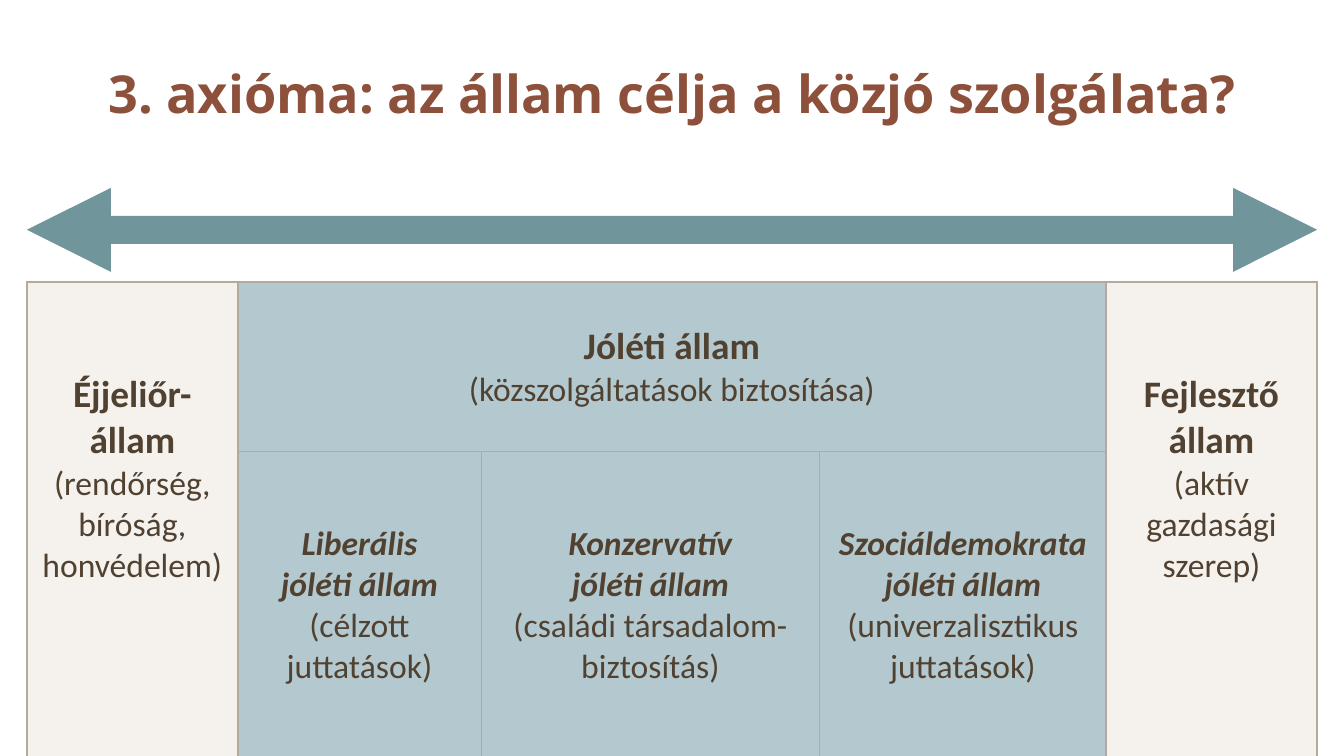
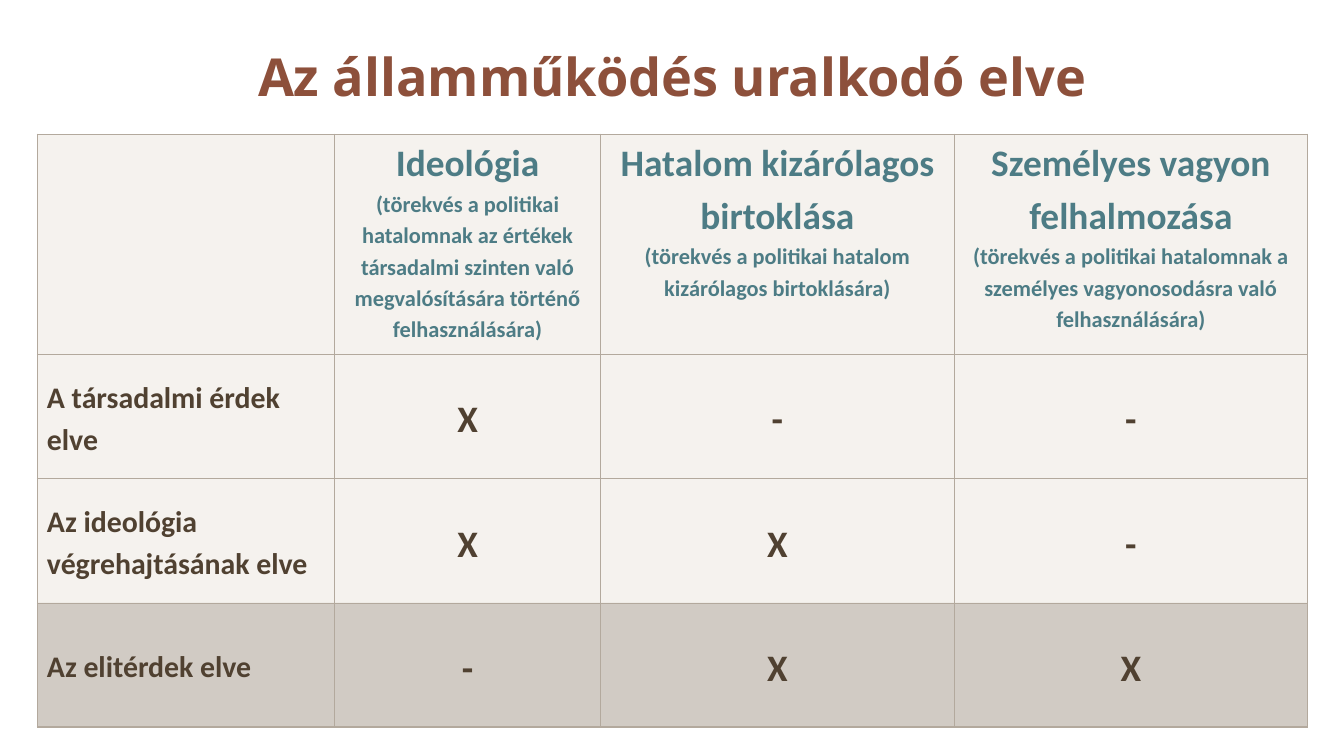
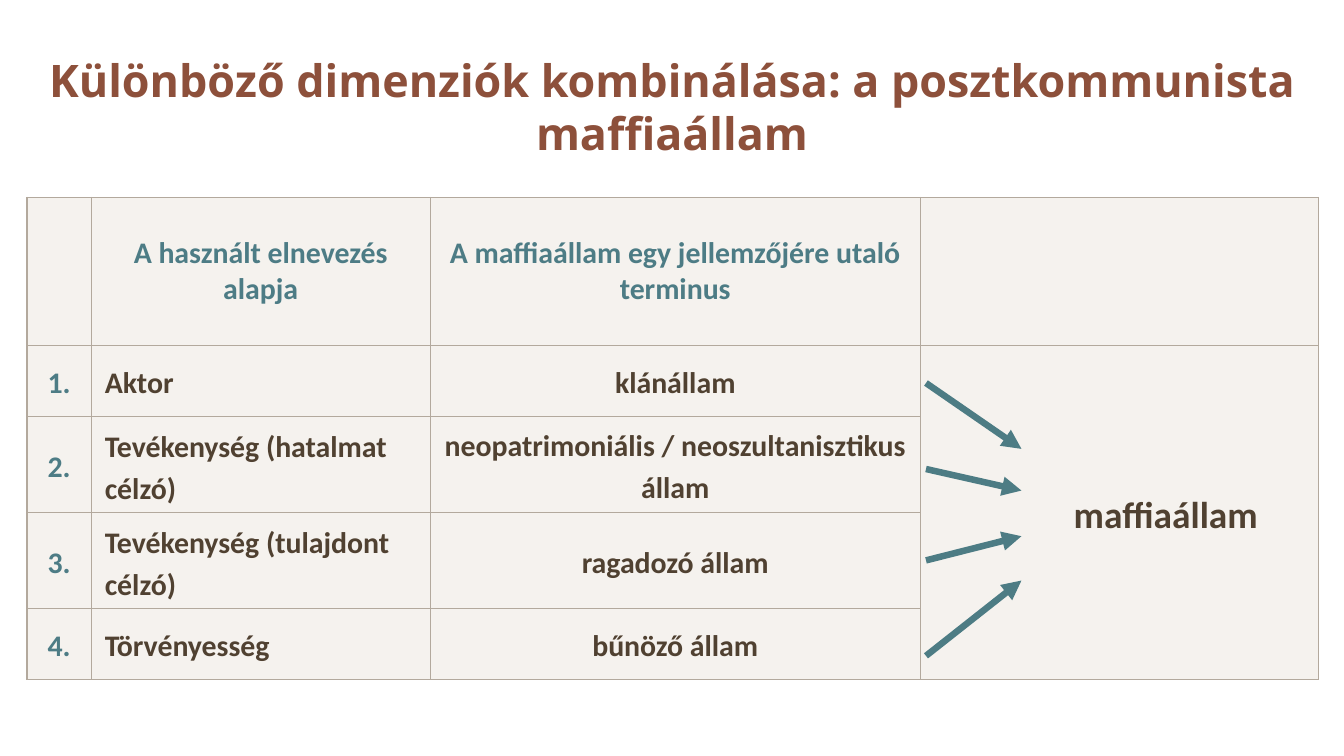
import lxml.etree
import pptx
import pptx.dml.color
import pptx.enum.shapes
import pptx.enum.text
import pptx.oxml.ns
import pptx.util

Inches = pptx.util.Inches
Pt = pptx.util.Pt
qn = pptx.oxml.ns.qn
CENTER = pptx.enum.text.PP_ALIGN.CENTER
LEFT = pptx.enum.text.PP_ALIGN.LEFT
MIDDLE = pptx.enum.text.MSO_ANCHOR.MIDDLE
TOP = pptx.enum.text.MSO_ANCHOR.TOP

COLORS = {
    "title": "8D503B",
    "text": "504131",
    "teal": "4D7C85",
    "arrow": "4D7C84",
    "border": "B3A99D",
    "cream": "EFEAE4",
    "taupe": "B3A99D",
    "blue": "6B95A1",
}
OPACITY = {"cream": 60, "taupe": 60, "blue": 50}


def style(color, size, bold=True, italic=False, name="Calibri"):
    return {"color": color, "font": {"size": Pt(size), "bold": bold, "italic": italic, "name": name}}


STYLES = {
    "title": style("title", 28, name="Open Sans"),
    "long title": style("title", 24, name="Open Sans"),
    "state": style("text", 20),
    "detail": style("text", 18, bold=False),
    "subtype": style("text", 18, italic=True),
    "heading": style("teal", 20),
    "explanation": style("teal", 12),
    "column": style("teal", 16),
    "label": style("text", 16),
}


def write(frame, paragraphs, align, spacing):
    for index, runs in enumerate(paragraphs):
        paragraph = frame.paragraphs[0] if index == 0 else frame.add_paragraph()
        paragraph.alignment = align
        paragraph.line_spacing = spacing
        for text, style_name in runs:
            for line_index, line in enumerate(text.split("\n")):
                if line_index:
                    paragraph.add_line_break()
                if line:
                    run = paragraph.add_run()
                    run.text = line
                    for attribute, value in STYLES[style_name]["font"].items():
                        setattr(run.font, attribute, value)
                    run.font.color.rgb = pptx.dml.color.RGBColor.from_string(
                        COLORS[STYLES[style_name]["color"]])


NARROW = (0.05, 0.05, 0.05, 0.05)
FLAT = (0.07, 0, 0.07, 0)
DEFAULT = (0.1, 0.05, 0.1, 0.05)
RAISED = (0.05, 0.05, 0.05, 0.67)

welfare_cells = {
    (0, 0): {"text": [[("Éjjeliőr-állam", "state")],
                      [("(rendőrség, bíróság, honvédelem)", "detail")]],
             "margins": RAISED},
    (0, 1): {"text": [[("Jóléti állam\n", "state"), ("(közszolgáltatások biztosítása)", "detail")]],
             "fill": "blue"},
    (0, 4): {"text": [[("Fejlesztő állam", "state")], [("(aktív gazdasági szerep)", "detail")]],
             "margins": RAISED},
}
subtypes = [
    ("Liberális\njóléti állam\n", "(célzott juttatások)"),
    ("Konzervatív\njóléti állam\n", "(családi társadalom-biztosítás)"),
    ("Szociáldemokrata jóléti állam\n", "(univerzalisztikus juttatások)"),
]
for column, (subtype, detail) in enumerate(subtypes, 1):
    welfare_cells[1, column] = {"text": [[(subtype, "subtype"), (detail, "detail")]], "fill": "blue"}

principle_cells = {}
motives = [
    ("Ideológia", "(törekvés a politikai hatalomnak az értékek társadalmi szinten való "
                  "megvalósítására történő felhasználására)"),
    ("Hatalom kizárólagos birtoklása", "(törekvés a politikai hatalom kizárólagos birtoklására)"),
    ("Személyes vagyon felhalmozása", "(törekvés a politikai hatalomnak a személyes "
                                      "vagyonosodásra való felhasználására)"),
]
for column, (motive, explanation) in enumerate(motives, 1):
    principle_cells[0, column] = {"text": [[(motive, "heading")], [(explanation, "explanation")]],
                                  "anchor": TOP, "spacing": 1.15}
principles = [
    ("A társadalmi érdek elve", "X--", "cream"),
    ("Az ideológia végrehajtásának elve", "XX-", "cream"),
    ("Az elitérdek elve", "-XX", "taupe"),
]
for row, (principle, marks, fill) in enumerate(principles, 1):
    principle_cells[row, 0] = {"text": [[(principle, "label")]], "align": LEFT,
                               "spacing": 1.15, "fill": fill}
    for column, mark in enumerate(marks, 1):
        principle_cells[row, column] = {"text": [[(mark, "state")]], "spacing": 1.15, "fill": fill}
principle_cells[3, 0]["fill"] = "taupe"

mafia_cells = {
    (0, 1): {"text": [[("A használt elnevezés alapja", "column")]], "margins": NARROW},
    (0, 2): {"text": [[("A maffiaállam egy jellemzőjére utaló terminus", "column")]]},
    (1, 3): {"text": [[("maffiaállam", "state")]], "spacing": 1.15, "indent": 0.69},
}
dimensions = [
    ("Aktor", "klánállam"),
    ("Tevékenység (hatalmat célzó)", "neopatrimoniális / neoszultanisztikus állam"),
    ("Tevékenység (tulajdont célzó)", "ragadozó állam"),
    ("Törvényesség", "bűnöző állam"),
]
for row, (basis, term) in enumerate(dimensions, 1):
    mafia_cells[row, 0] = {"text": [[(f"{row}.", "column")]], "spacing": 1.15}
    mafia_cells[row, 1] = {"text": [[(basis, "label")]], "spacing": 1.15,
                           "align": LEFT, "margins": DEFAULT}
    mafia_cells[row, 2] = {"text": [[(term, "label")]], "spacing": 1.15}

pages = [
    {"title": "3. axióma: az állam célja a közjó szolgálata?", "title style": "title",
     "title top": 0.14, "title height": 1.1,
     "at": (0.2, 2.1), "widths": [1.57, 1.81, 2.52, 2.13, 1.57], "heights": [1.26, 1.65],
     "table height": 2.91,
     "cells": welfare_cells, "margins": NARROW, "heavy columns": {0, 1, 4, 5},
     "merges": [((0, 0), (1, 0)), ((0, 1), (0, 3)), ((0, 4), (1, 4))],
     "arrows": [(0.2, 1.71, 9.8, 1.71)], "arrow width": 15, "arrow opacity": 80,
     "arrow ends": ["headEnd", "tailEnd"]},
    {"title": "Az államműködés uralkodó elve", "title style": "title",
     "title top": 0.06, "title height": 1,
     "at": (0.28, 1), "widths": [2.21, 1.98, 2.63, 2.63],
     "heights": [1.64] + [(4.41 - 1.64) / 3] * 3, "table height": 4.41,
     "cells": principle_cells, "margins": FLAT, "heavy columns": {0, 4},
     "merges": [], "arrows": []},
    {"title": "Különböző dimenziók kombinálása: a posztkommunista maffiaállam",
     "title style": "long title", "title top": 0.29, "title height": 1,
     "at": (0.2, 1.47), "widths": [0.48, 2.52, 3.65, 2.96], "heights": [1.1] + [0.53] * 4,
     "table height": 3.55,
     "cells": mafia_cells, "margins": FLAT, "heavy columns": {0, 4},
     "merges": [((1, 3), (4, 3))],
     "arrows": [(6.89, start, 7.6, end) for start, end in
                [(2.85, 3.34), (3.49, 3.65), (4.17, 3.99), (4.88, 4.32)]],
     "arrow width": 3.5, "arrow opacity": 100, "arrow ends": ["tailEnd"]},
]

deck = pptx.Presentation()
deck.slide_width = Inches(10)
deck.slide_height = Inches(10) * 9 // 16

for page in pages:
    slide = deck.slides.add_slide(deck.slide_layouts[6])

    heading = slide.shapes.add_textbox(Inches(0.12), Inches(page["title top"]),
                                       Inches(9.76), Inches(page["title height"])).text_frame
    heading.word_wrap = True
    heading.vertical_anchor = MIDDLE
    write(heading, [[(page["title"], page["title style"])]], CENTER, 1.0)

    widths, heights = page["widths"], page["heights"]
    left, top = page["at"]
    grid = slide.shapes.add_table(len(heights), len(widths), Inches(left), Inches(top),
                                  Inches(sum(widths)), Inches(page["table height"]))
    table = grid.table
    table.first_row = False
    table.horz_banding = False
    for column, width in zip(table.columns, widths):
        column.width = Inches(width)
    for row, height in zip(table.rows, heights):
        row.height = Inches(height)
    grid.height = Inches(page["table height"])
    for first, last in page["merges"]:
        table.cell(*first).merge(table.cell(*last))

    heavy_rows = {0, len(heights)}
    for r in range(len(heights)):
        for c in range(len(widths)):
            cell = table.cell(r, c)
            if cell.is_spanned:
                continue
            content = page["cells"].get((r, c), {})
            margins = content.get("margins", page["margins"])
            for side, margin in zip(("left", "top", "right", "bottom"), margins):
                setattr(cell, f"margin_{side}", Inches(margin))
            cell.vertical_anchor = content.get("anchor", MIDDLE)
            write(cell.text_frame, content.get("text", []),
                  content.get("align", CENTER), content.get("spacing", 1.0))
            if "indent" in content:
                indent = cell.text_frame.paragraphs[0]._p.get_or_add_pPr()
                indent.set("marL", str(Inches(content["indent"])))

            properties = cell._tc.get_or_add_tcPr()
            right_edge = c + max(cell.span_width, 1)
            bottom_edge = r + max(cell.span_height, 1)
            edges = {
                "lnL": c in page["heavy columns"],
                "lnR": right_edge in page["heavy columns"],
                "lnT": r in heavy_rows,
                "lnB": bottom_edge in heavy_rows,
            }
            for edge, heavy in edges.items():
                border = lxml.etree.SubElement(properties, qn(f"a:{edge}"),
                                               w=str(Pt(1 if heavy else 0.5)))
                paint = lxml.etree.SubElement(border, qn("a:solidFill"))
                lxml.etree.SubElement(paint, qn("a:srgbClr"), val=COLORS["border"])

            fill = content.get("fill", "cream")
            cell.fill.solid()
            cell.fill.fore_color.rgb = pptx.dml.color.RGBColor.from_string(COLORS[fill])
            tint = properties.find(qn("a:solidFill")).find(qn("a:srgbClr"))
            lxml.etree.SubElement(tint, qn("a:alpha"), val=str(OPACITY[fill] * 1000))

    for ends in page["arrows"]:
        arrow = slide.shapes.add_connector(pptx.enum.shapes.MSO_CONNECTOR.STRAIGHT,
                                           *[Inches(value) for value in ends])
        arrow.line.width = Pt(page["arrow width"])
        arrow.line.color.rgb = pptx.dml.color.RGBColor.from_string(COLORS["arrow"])
        outline = arrow.line._get_or_add_ln()
        if page["arrow opacity"] < 100:
            tint = outline.find(qn("a:solidFill")).find(qn("a:srgbClr"))
            lxml.etree.SubElement(tint, qn("a:alpha"), val=str(page["arrow opacity"] * 1000))
        for end in page["arrow ends"]:
            lxml.etree.SubElement(outline, qn(f"a:{end}"), type="triangle")
        lxml.etree.SubElement(arrow._element.spPr, qn("a:effectLst"))

deck.save("out.pptx")
